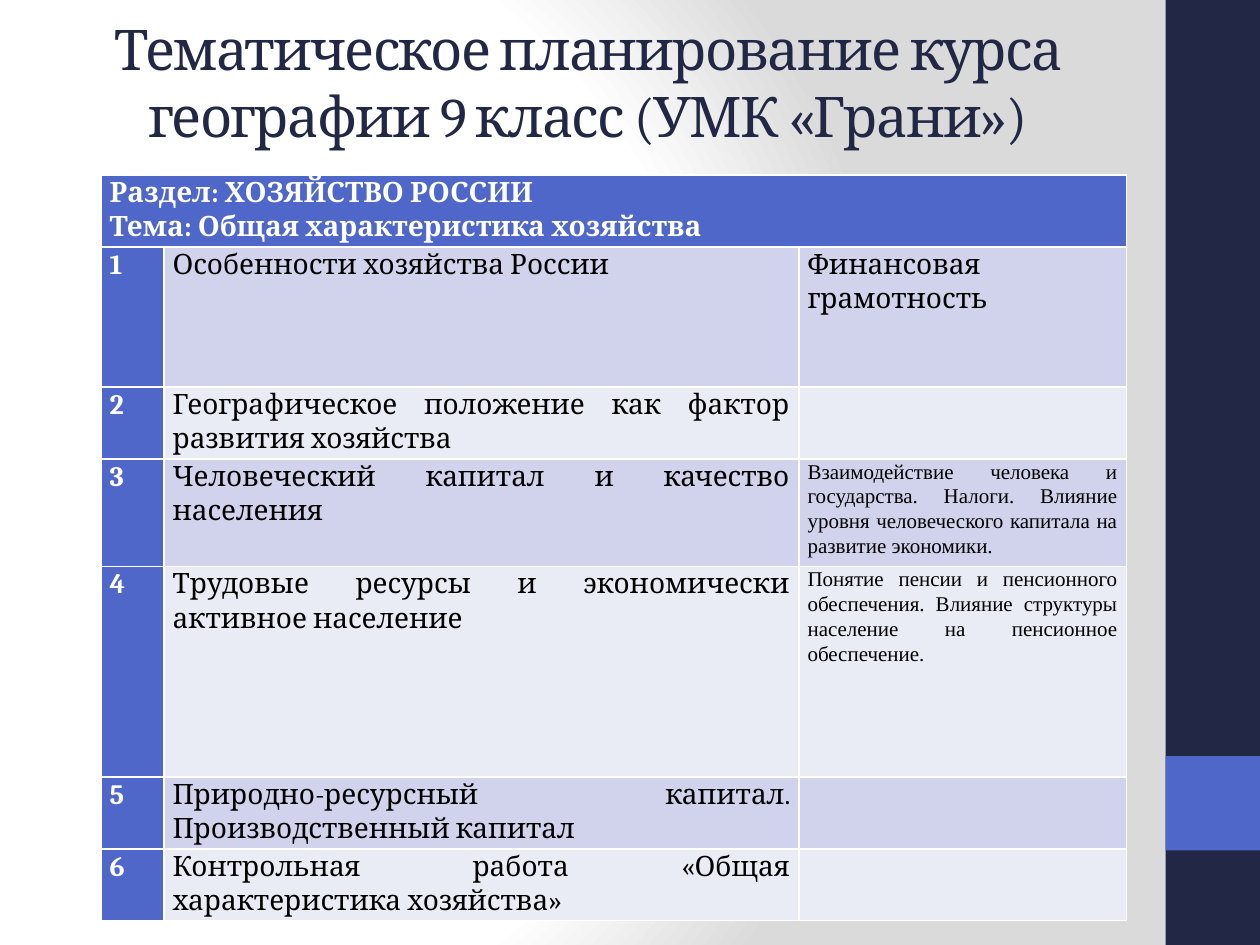
from pptx import Presentation
from pptx.dml.color import RGBColor
from pptx.enum.shapes import MSO_SHAPE
from pptx.enum.text import MSO_ANCHOR, PP_ALIGN
from pptx.oxml import parse_xml
from pptx.util import Inches, Pt

RECT = MSO_SHAPE.RECTANGLE
MIDDLE = MSO_ANCHOR.MIDDLE
CENTER, JUSTIFY = PP_ALIGN.CENTER, PP_ALIGN.JUSTIFY

THEME = {
    "navy": "212745", "blue": "4E67C8", "white": "FFFFFF", "gray": "DADADA",
    "black": "000000", "odd": "D0D3EB", "even": "E9EBF5",
    "serif": "Cambria", "note_font": "Times New Roman",
    "title": 32, "body": 16, "note": 12,
}

prs = Presentation()
prs.slide_width, prs.slide_height = Inches(10), Inches(7.5)
COL, ROW = prs.slide_width / 40, prs.slide_height / 30
s = prs.slides.add_slide(prs.slide_layouts[6])


def grid(x, y, w, h):
    return round(x * COL), round(y * ROW), round(w * COL), round(h * ROW)


def add_run(p, text, size, color, font=THEME["serif"], bold=False):
    r = p.add_run()
    r.text = text
    r.font.size = Pt(size)
    r.font.name = font
    r.font.bold = bold
    r.font.color.rgb = RGBColor.from_string(color)
    return r


stops = [(0, THEME["white"]), (75, THEME["white"]), (100, THEME["gray"])]
gs = "".join(f'<a:gs pos="{pos * 1000}"><a:srgbClr val="{c}"/></a:gs>' for pos, c in stops)
s.element.cSld.insert(0, parse_xml(
    '<p:bg xmlns:p="http://schemas.openxmlformats.org/presentationml/2006/main" '
    'xmlns:a="http://schemas.openxmlformats.org/drawingml/2006/main"><p:bgPr>'
    f'<a:gradFill rotWithShape="1"><a:gsLst>{gs}</a:gsLst><a:path path="circle">'
    '<a:fillToRect l="20000" t="50000" r="100000" b="50000"/></a:path></a:gradFill>'
    '<a:effectLst/></p:bgPr></p:bg>'))

for y, h, color in [(0, 30, "navy"), (24, 3, "blue")]:
    sp = s.shapes.add_shape(RECT, *grid(37, y, 3, h))
    sp.shadow.inherit = False
    sp.fill.solid()
    sp.fill.fore_color.rgb = RGBColor.from_string(THEME[color])
    sp.line.fill.background()

tf = s.shapes.add_textbox(*grid(2, 1.2, 33.32, 5)).text_frame
tf.word_wrap = True
tf.vertical_anchor = MIDDLE
tf.margin_bottom = round(2.4 * ROW)
p = tf.paragraphs[0]
p.alignment = CENTER
r = add_run(p, "Тематическое планирование курса географии 9 класс (УМК «Грани»)",
            THEME["title"], THEME["navy"])
r.font._element.set("spc", "-100")

header = ["Раздел: ХОЗЯЙСТВО РОССИИ", "Тема: Общая характеристика хозяйства"]
lessons = [
    ("Особенности хозяйства России", "Финансовая грамотность", "body", "serif"),
    ("Географическое положение как фактор развития хозяйства", "", "body", "serif"),
    ("Человеческий капитал и качество населения",
     "Взаимодействие человека и государства. Налоги. Влияние уровня человеческого "
     "капитала на развитие экономики.", "note", "note_font"),
    ("Трудовые ресурсы и экономически активное население",
     "Понятие пенсии и пенсионного обеспечения. Влияние структуры население на "
     "пенсионное обеспечение.", "note", "note_font"),
    ("Природно-ресурсный капитал. Производственный капитал", "", "body", "serif"),
    ("Контрольная работа «Общая характеристика хозяйства»", "", "body", "serif"),
]
widths = [2, 20.16, 10.4]
heights = [2.16, 4.44, 2.16, 3.28, 6.68, 2.16, 2.16]

table = s.shapes.add_table(len(heights), len(widths),
                           *grid(3.2, 5.56, sum(widths), sum(heights))).table
table.first_col = True
for column, w in zip(table.columns, widths):
    column.width = round(w * COL)
for row, h in zip(table.rows, heights):
    row.height = round(h * ROW)
table.cell(0, 0).merge(table.cell(0, 2))

white_bold = (THEME["body"], THEME["white"], THEME["serif"], True)
contents = [[(header, white_bold), ([], ()), ([], ())]]
for n, (topic, note, size, font) in enumerate(lessons, 1):
    contents.append([
        ([str(n)], white_bold),
        ([topic], (THEME["body"], THEME["black"])),
        ([note] if note else [], (THEME[size], THEME["black"], THEME[font])),
    ])

for i, row in enumerate(contents):
    for j, (lines, style) in enumerate(row):
        cell = table.cell(i, j)
        fill = "blue" if i == 0 or j == 0 else "odd" if i % 2 else "even"
        cell.fill.solid()
        cell.fill.fore_color.rgb = RGBColor.from_string(THEME[fill])
        cell.margin_left = cell.margin_right = round(0.28 * COL)
        cell.margin_top = cell.margin_bottom = 0
        tf = cell.text_frame
        for k, text in enumerate(lines):
            p = tf.add_paragraph() if k else tf.paragraphs[0]
            p.alignment = JUSTIFY
            p.line_spacing = 1.07
            add_run(p, text, *style)

prs.save("out.pptx")
